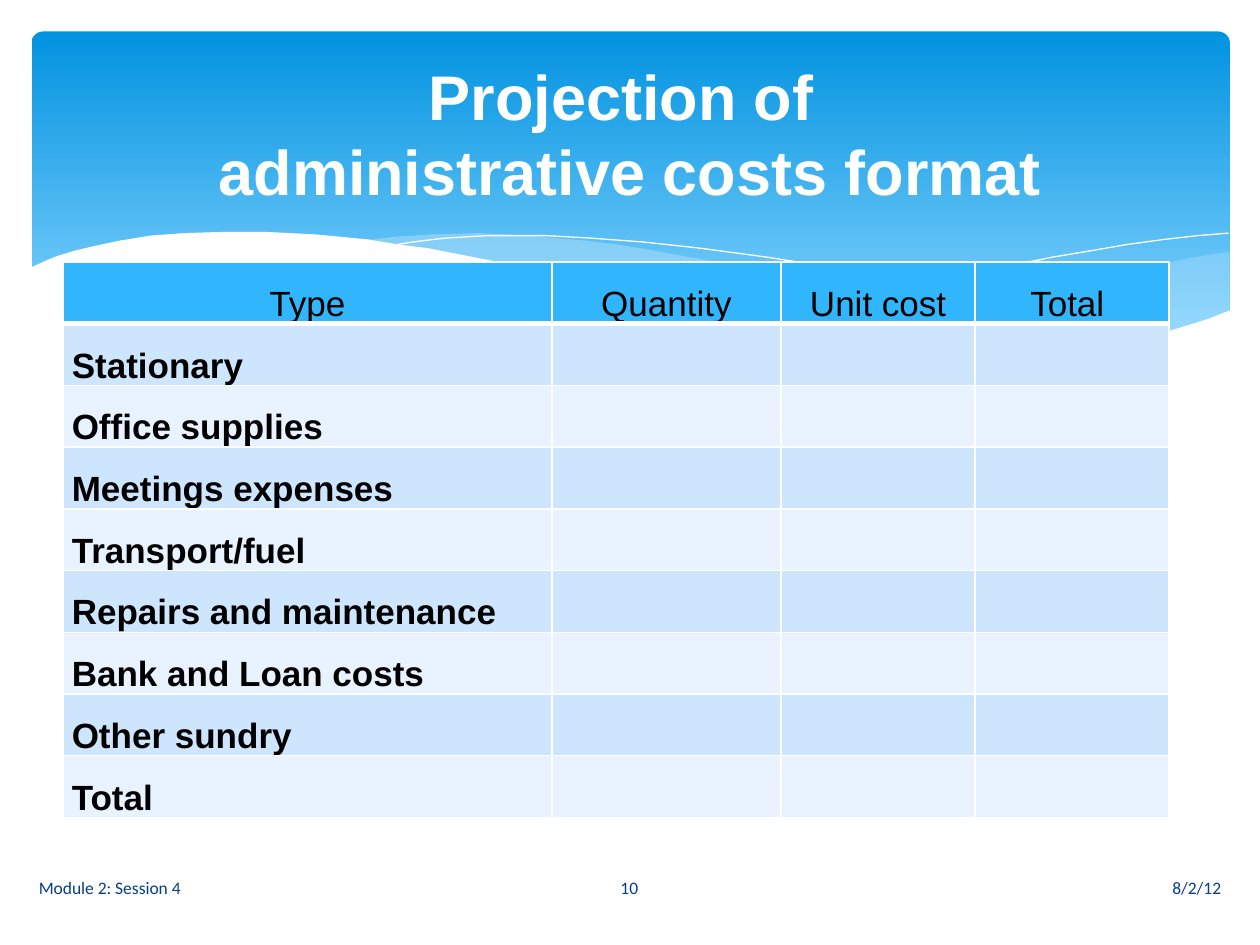
from lxml import etree
from pptx import Presentation
from pptx import util as u
from pptx.dml.color import RGBColor
from pptx.enum import shapes, text
from pptx.oxml.ns import qn

WHITE = "FFFFFF"
ALIGN = text.PP_ALIGN
MIDDLE = text.MSO_ANCHOR.MIDDLE

RIGHT_WAVE = [
    (9.75, 2), (9.48, 2.04), (9.21, 2.1), (8.91, 2.16), (8.61, 2.23), (8.05, 2.37),
    (7.53, 2.48), (7.06, 2.57), (6.61, 2.65), (6.91, 2.69), (7.19, 2.72),
    (7.45, 2.75), (7.69, 2.77), (8.03, 2.78), (8.35, 2.77), (8.63, 2.75),
    (8.89, 2.72), (9.13, 2.67), (9.35, 2.62), (9.49, 2.57), (9.76, 2.47), (9.76, 2)]
MIDDLE_WAVE = [
    (8.93, 2.73), (8.66, 2.69), (8.37, 2.65), (8.07, 2.6), (7.75, 2.54), (7.41, 2.47),
    (7.06, 2.4), (6.68, 2.31), (6.29, 2.22), (5.98, 2.14), (5.69, 2.08), (5.41, 2.03),
    (5.14, 1.98), (4.89, 1.94), (4.65, 1.91), (4.42, 1.89), (4.2, 1.87), (3.8, 1.85),
    (3.44, 1.86), (3.13, 1.88), (2.86, 1.91), (3.23, 1.96), (3.62, 2.03), (4.04, 2.11),
    (4.49, 2.22), (4.91, 2.32), (5.3, 2.4), (5.66, 2.48), (6.01, 2.55), (6.34, 2.61),
    (6.65, 2.66), (6.95, 2.7), (7.22, 2.74), (7.48, 2.76), (7.85, 2.78), (8.28, 2.78),
    (8.57, 2.77), (8.76, 2.75)]
FALLING_LINE = [
    (3.09, 1.95), (3.28, 1.92), (3.53, 1.89), (3.87, 1.87), (4.33, 1.87), (4.69, 1.89),
    (5.1, 1.92), (5.56, 1.97), (6.08, 2.04), (6.65, 2.13), (6.95, 2.19), (7.27, 2.26),
    (7.6, 2.33), (7.95, 2.41), (8.31, 2.51), (8.69, 2.61), (9.07, 2.72)]
RISING_LINE = [
    (6.13, 2.57), (6.53, 2.46), (6.95, 2.35), (7.48, 2.23), (8.06, 2.1), (8.36, 2.04),
    (8.66, 1.99), (8.95, 1.94), (9.24, 1.9), (9.51, 1.87), (9.75, 1.85)]
WHITE_WAVE = [
    (9.77, 2.46), (9.59, 2.53), (9.4, 2.59), (9.2, 2.65), (8.99, 2.69), (8.75, 2.73),
    (8.5, 2.75), (8.23, 2.77), (7.93, 2.76), (7.61, 2.75), (7.26, 2.72), (6.88, 2.68),
    (6.48, 2.62), (6.03, 2.54), (5.55, 2.45), (5.03, 2.33), (4.47, 2.2), (3.91, 2.07),
    (3.4, 1.97), (3.16, 1.94), (2.92, 1.9), (2.71, 1.88), (2.5, 1.86), (2.11, 1.84),
    (1.77, 1.84), (1.46, 1.85), (1.19, 1.87), (0.95, 1.91), (0.76, 1.95), (0.59, 1.99),
    (0.46, 2.03), (0.36, 2.07), (0.23, 2.13), (0.23, 3.29), (9.77, 3.29)]

HEADERS = ["Type", "Quantity", "Unit cost", "Total "]
COSTS = ["Stationary", "Office supplies", "Meetings expenses", "Transport/fuel",
         "Repairs and maintenance", "Bank and Loan costs", "Other sundry", "Total"]
COLUMN_WIDTHS = [3.88, 1.82, 1.54, 1.54]
ROW_HEIGHT = 0.49


def rgb(color):
    return RGBColor.from_string(color)


def box(*lengths):
    return [u.Inches(n) for n in lengths]


def add_run(p, words, size, font, color, bold=False):
    r = p.add_run()
    r.text = words
    r.font.size, r.font.name, r.font.bold = u.Pt(size), font, bold
    r.font.color.rgb = rgb(color)


def add_banner(s):
    sp = s.shapes.add_shape(shapes.MSO_SHAPE.ROUNDED_RECTANGLE, *box(0.25, 0.25, 9.51, 2.7))
    sp.adjustments[0] = 0.034
    sp.shadow.inherit = False
    sp.line.fill.background()
    sp.fill.gradient()
    sp.fill.gradient_angle = 270
    for stop, (position, color) in zip(sp.fill.gradient_stops, [(0, "0293E0"), (0.9, "83D3FE")]):
        stop.position = position
        stop.color.rgb = rgb(color)


def add_outline(s, points, closed):
    start, *rest = [box(*point) for point in points]
    builder = s.shapes.build_freeform(*start)
    builder.add_line_segments(rest, close=closed)
    sp = builder.convert_to_shape()
    sp.shadow.inherit = False
    return sp


def add_wave(s, points, color, opacity=100):
    sp = add_outline(s, points, True)
    sp.line.fill.background()
    sp.fill.solid()
    sp.fill.fore_color.rgb = rgb(color)
    if opacity < 100:
        clr = sp.element.spPr.find(f"{qn('a:solidFill')}/{qn('a:srgbClr')}")
        etree.SubElement(clr, qn("a:alpha"), val=str(opacity * 1000))


def add_wave_line(s, points):
    sp = add_outline(s, points, False)
    sp.fill.background()
    sp.line.color.rgb = rgb(WHITE)
    sp.line.width = u.Pt(0)


def set_borders(cell, bottom):
    """Draw white cell borders, 1 pt wide except for the bottom one."""
    tcPr = cell._tc.get_or_add_tcPr()
    for i, (side, width) in enumerate([("L", 1), ("R", 1), ("T", 1), ("B", bottom)]):
        ln = etree.Element(qn(f"a:ln{side}"), w=str(u.Pt(width)))
        fill = etree.SubElement(ln, qn("a:solidFill"))
        etree.SubElement(fill, qn("a:srgbClr"), val=WHITE)
        tcPr.insert(i, ln)


def fill_cell(cell, words, color, header):
    cell.fill.solid()
    cell.fill.fore_color.rgb = rgb(color)
    set_borders(cell, 3 if header else 1)
    if words:
        cell.vertical_anchor = text.MSO_ANCHOR.BOTTOM
        cell.margin_left = cell.margin_right = u.Inches(0.07)
        cell.margin_top = cell.margin_bottom = 0
        p = cell.text_frame.paragraphs[0]
        p.alignment = ALIGN.CENTER if header else ALIGN.LEFT
        add_run(p, words, 20, "Arial", "000000", bold=not header)


def add_cost_table(s):
    rows = [HEADERS] + [[cost, "", "", ""] for cost in COSTS]
    frame = s.shapes.add_table(len(rows), len(HEADERS),
                               *box(0.5, 2.08, sum(COLUMN_WIDTHS), ROW_HEIGHT * len(rows)))
    table = frame.table
    for column, width in zip(table.columns, COLUMN_WIDTHS):
        column.width = u.Inches(width)
    for i, row in enumerate(rows):
        table.rows[i].height = u.Inches(ROW_HEIGHT)
        color = "31B6FD" if i == 0 else "CEE5FE" if i % 2 else "E8F3FF"
        for j, words in enumerate(row):
            fill_cell(table.cell(i, j), words, color, header=i == 0)


def set_title(s, lines):
    title = s.shapes.title
    title.left, title.top, title.width, title.height = box(0.5, 0.37, 9, 1.37)
    tf = title.text_frame
    tf.word_wrap, tf.vertical_anchor = True, MIDDLE
    p = tf.paragraphs[0]
    p.alignment = ALIGN.CENTER
    for i, line in enumerate(lines):
        if i:
            p.add_line_break()
        add_run(p, line, 36, "Arial", WHITE, bold=True)
    title.element.getparent().append(title.element)  # bring in front of the banner


def add_footer(s, words, left, width, align):
    tf = s.shapes.add_textbox(*box(left, 6.84, width, 0.4)).text_frame
    tf.word_wrap, tf.vertical_anchor = True, MIDDLE
    p = tf.paragraphs[0]
    p.alignment = align
    add_run(p, words, 10, "Calibri", "073E87")


def main():
    prs = Presentation()
    prs.slide_width, prs.slide_height = box(10, 7.5)
    s = prs.slides.add_slide(prs.slide_layouts[5])
    add_banner(s)
    add_wave(s, RIGHT_WAVE, "C6E7FC", 29)
    add_wave(s, MIDDLE_WAVE, "C6E7FC", 40)
    add_wave_line(s, FALLING_LINE)
    add_wave_line(s, RISING_LINE)
    add_wave(s, WHITE_WAVE, WHITE)
    add_cost_table(s)
    set_title(s, ["Projection of ", "administrative costs format"])
    add_footer(s, "8/2/12", 5.65, 4.14, ALIGN.RIGHT)
    add_footer(s, "Module 2: Session 4", 0.21, 4.14, ALIGN.LEFT)
    add_footer(s, "10", 4.36, 1.27, ALIGN.CENTER)
    prs.save("out.pptx")


if __name__ == "__main__":
    main()
